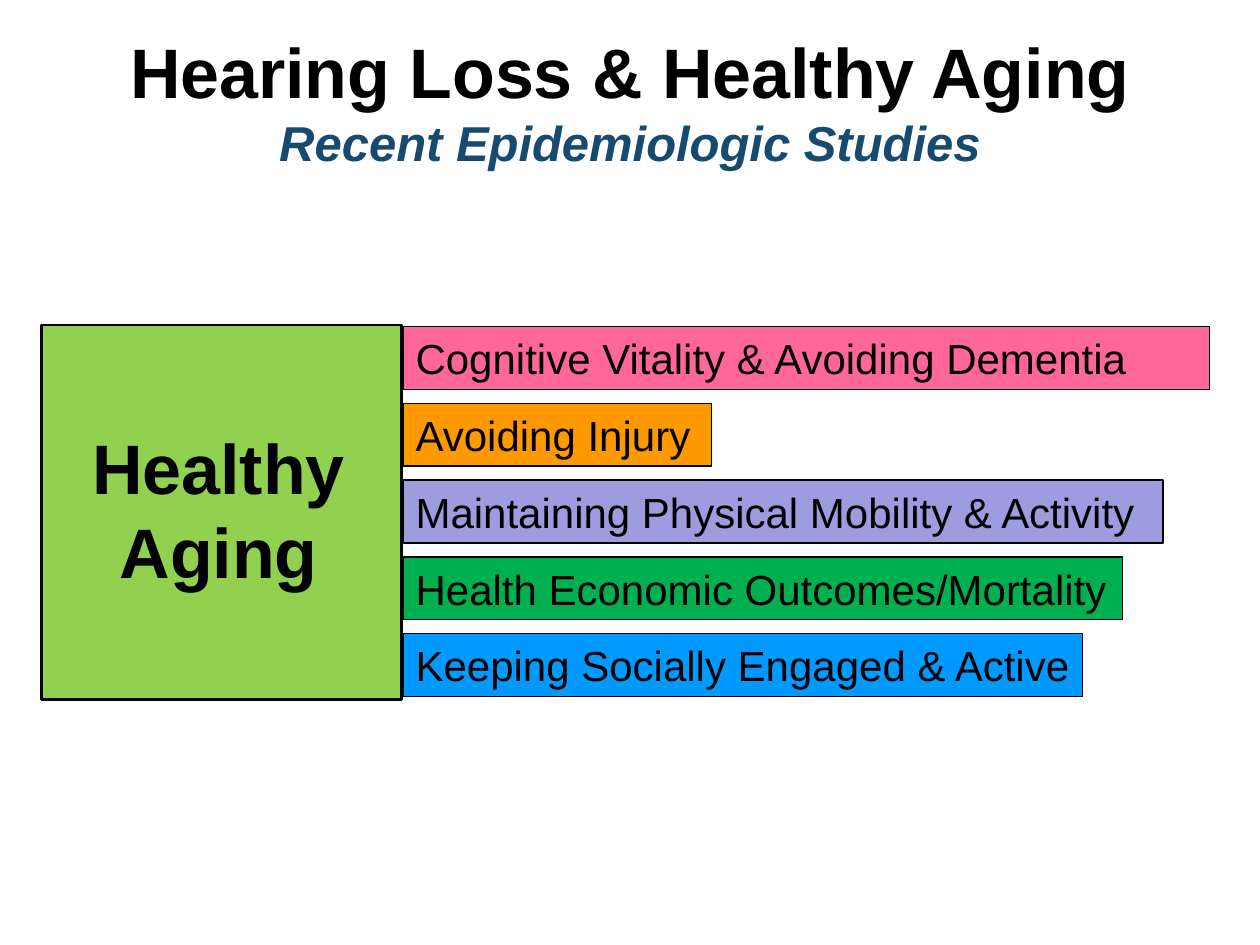
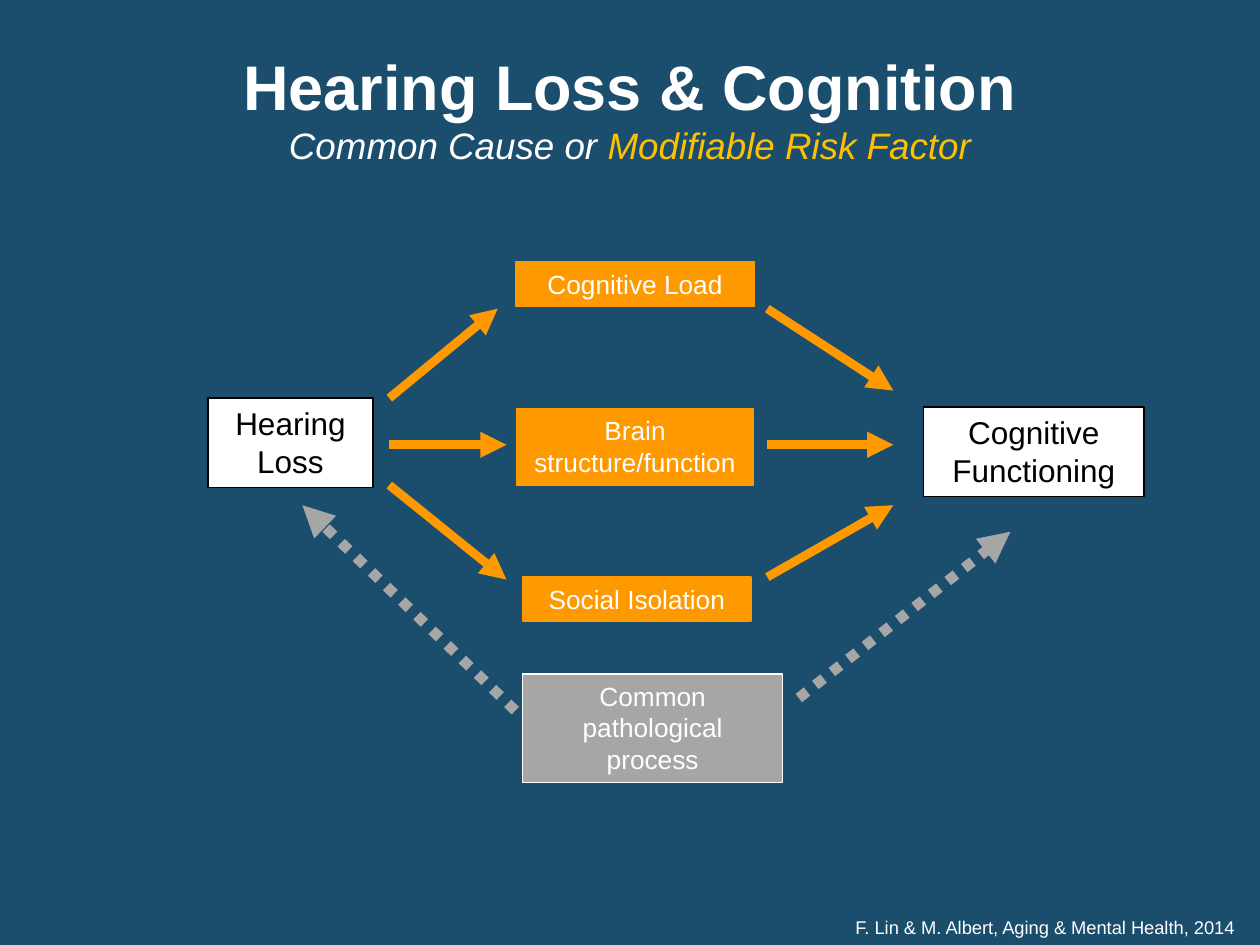
from lxml.etree import SubElement
from pptx import Presentation
from pptx.dml.color import RGBColor
from pptx.enum.dml import MSO_LINE
from pptx.enum.shapes import MSO_CONNECTOR, MSO_SHAPE
from pptx.enum.text import MSO_ANCHOR, PP_ALIGN
from pptx.oxml.ns import qn
from pptx.util import Inches, Pt

# Grid of 100 columns by 75 rows; all positions and sizes below are in cells
WIDTH, HEIGHT = Inches(10), Inches(7.5)
COL, ROW = WIDTH / 100, HEIGHT / 75

FONT = "Arial"
BLACK = RGBColor(0x00, 0x00, 0x00)
WHITE = RGBColor(0xFF, 0xFF, 0xFF)
NAVY = RGBColor(0x1B, 0x4D, 0x6D)
STEEL = RGBColor(0x16, 0x4A, 0x6F)
LIME = RGBColor(0x92, 0xD0, 0x50)
PINK = RGBColor(0xFF, 0x66, 0x99)
ORANGE = RGBColor(0xFF, 0x99, 0x00)
LAVENDER = RGBColor(0x9C, 0x9C, 0xDF)
GREEN = RGBColor(0x00, 0xB0, 0x50)
BLUE = RGBColor(0x00, 0x99, 0xFF)
GREY = RGBColor(0xA6, 0xA6, 0xA6)
GOLD = RGBColor(0xFF, 0xC0, 0x00)


def cells(left, top, width, height):
    return int(left * COL), int(top * ROW), int(width * COL), int(height * ROW)


def add_slide(prs, color):
    s = prs.slides.add_slide(prs.slide_layouts[6])
    s.background.fill.solid()
    s.background.fill.fore_color.rgb = color
    return s


def add_run(p, text, size, color, bold=False, italic=False):
    r = p.add_run()
    r.text = text
    font = r.font
    font.name, font.size = FONT, Pt(size)
    font.bold, font.italic = bold, italic
    font.color.rgb = color


def write(sp, lines, size, color, align=PP_ALIGN.CENTER, bold=False, wrap=True):
    """Fill a shape with one paragraph for each line, from the top."""
    tf = sp.text_frame
    tf.word_wrap = wrap
    tf.vertical_anchor = MSO_ANCHOR.TOP
    for i, line in enumerate(lines):
        p = tf.add_paragraph() if i else tf.paragraphs[0]
        p.alignment = align
        add_run(p, line, size, color, bold)


def add_title(s, area, title, title_size, color, subtitle_runs, subtitle_size, bold=False):
    """Bold title with an italic subtitle, given as (text, colour) runs, below it."""
    tf = s.shapes.add_textbox(*cells(*area)).text_frame
    tf.word_wrap = True
    tf.vertical_anchor = MSO_ANCHOR.MIDDLE
    p = tf.paragraphs[0]
    p.alignment = PP_ALIGN.CENTER
    add_run(p, title, title_size, color, bold=True)
    p.add_line_break()
    for text, run_color in subtitle_runs:
        add_run(p, text, subtitle_size, run_color, bold, italic=True)


def add_box(s, area, fill, line, line_width=0.75):
    sp = s.shapes.add_shape(MSO_SHAPE.RECTANGLE, *cells(*area))
    sp.shadow.inherit = False
    sp.fill.solid()
    sp.fill.fore_color.rgb = fill
    sp.line.color.rgb = line
    sp.line.width = Pt(line_width)
    return sp


def add_arrow(s, start, end, color, width, dash=None):
    (x1, y1), (x2, y2) = start, end
    cx = s.shapes.add_connector(MSO_CONNECTOR.STRAIGHT, int(x1 * COL), int(y1 * ROW),
                                int(x2 * COL), int(y2 * ROW))
    cx.line.color.rgb = color
    cx.line.width = Pt(width)
    if dash:
        cx.line.dash_style = dash
    SubElement(cx.line._get_or_add_ln(), qn("a:tailEnd"), type="triangle")
    SubElement(cx._element.spPr, qn("a:effectLst"))


def build_healthy_aging(prs):
    s = add_slide(prs, WHITE)
    add_title(s, (0, 1.7, 100, 12.5), "Hearing Loss & Healthy Aging", 40, BLACK,
              [("Recent Epidemiologic Studies", STEEL)], 28, bold=True)
    add_box(s, (3.3, 25.8, 28.6, 29.7), LIME, BLACK, 1.5)
    label = s.shapes.add_textbox(*cells(6.2, 33.2, 22.3, 14.5))
    write(label, ["Healthy", "Aging"], 40, BLACK, bold=True, wrap=False)

    goals = [
        ("Cognitive Vitality & Avoiding Dementia", 64, PINK),
        ("Avoiding Injury", 24.5, ORANGE),
        ("Maintaining Physical Mobility & Activity", 60.3, LAVENDER),
        ("Health Economic Outcomes/Mortality", 57.1, GREEN),
        ("Keeping Socially Engaged & Active", 53.9, BLUE),
    ]
    for i, (text, width, color) in enumerate(goals):
        bar = add_box(s, (32, 25.9 + 6.1 * i, width, 5), color, BLACK)
        write(bar, [text], 24, BLACK, PP_ALIGN.LEFT)


def build_cognition(prs):
    s = add_slide(prs, NAVY)
    add_title(s, (12.5, 3.8, 75, 9.4), "Hearing Loss & Cognition", 36, WHITE,
              [("Common Cause or ", WHITE), ("Modifiable Risk Factor", GOLD)], 21)

    for text, area in [("Hearing Loss", (16.5, 31.6, 13.1, 7.1)),
                       ("Cognitive Functioning", (73.3, 32.3, 17.5, 7.1))]:
        write(add_box(s, area, WHITE, BLACK), [text], 18, BLACK)

    factors = [
        ("Cognitive Load", (40.9, 20.8, 19, 3.5), ORANGE, ORANGE),
        ("Brain structure/function", (41, 32.4, 18.8, 6.1), ORANGE, ORANGE),
        ("Social Isolation", (41.5, 45.8, 18.1, 3.5), ORANGE, ORANGE),
        ("Common pathological process", (41.5, 53.5, 20.6, 8.6), GREY, WHITE),
    ]
    for text, area, fill, line in factors:
        write(add_box(s, area, fill, line), [text], 15, WHITE)

    for start_row, end in [(31.6, (39.5, 24.5)), (35.3, (40.2, 35.3)), (38.5, (40.2, 46))]:
        add_arrow(s, (30.9, start_row), end, ORANGE, 5)
    for start_row, end_row in [(24.5, 31), (35.3, 35.3), (45.8, 40.1)]:
        add_arrow(s, (60.9, start_row), (70.9, end_row), ORANGE, 5)
    for start, end in [((63.4, 55.4), (80.2, 42.2)), ((40.9, 56.4), (24, 40.1))]:
        add_arrow(s, start, end, GREY, 6, MSO_LINE.ROUND_DOT)

    source = s.shapes.add_textbox(*cells(66.9, 72.2, 33.1, 2.8))
    write(source, ["F. Lin & M. Albert, Aging & Mental Health, 2014"], 10.5, WHITE,
          PP_ALIGN.LEFT)


def main():
    prs = Presentation()
    prs.slide_width, prs.slide_height = WIDTH, HEIGHT
    build_healthy_aging(prs)
    build_cognition(prs)
    prs.save("out.pptx")


if __name__ == "__main__":
    main()
